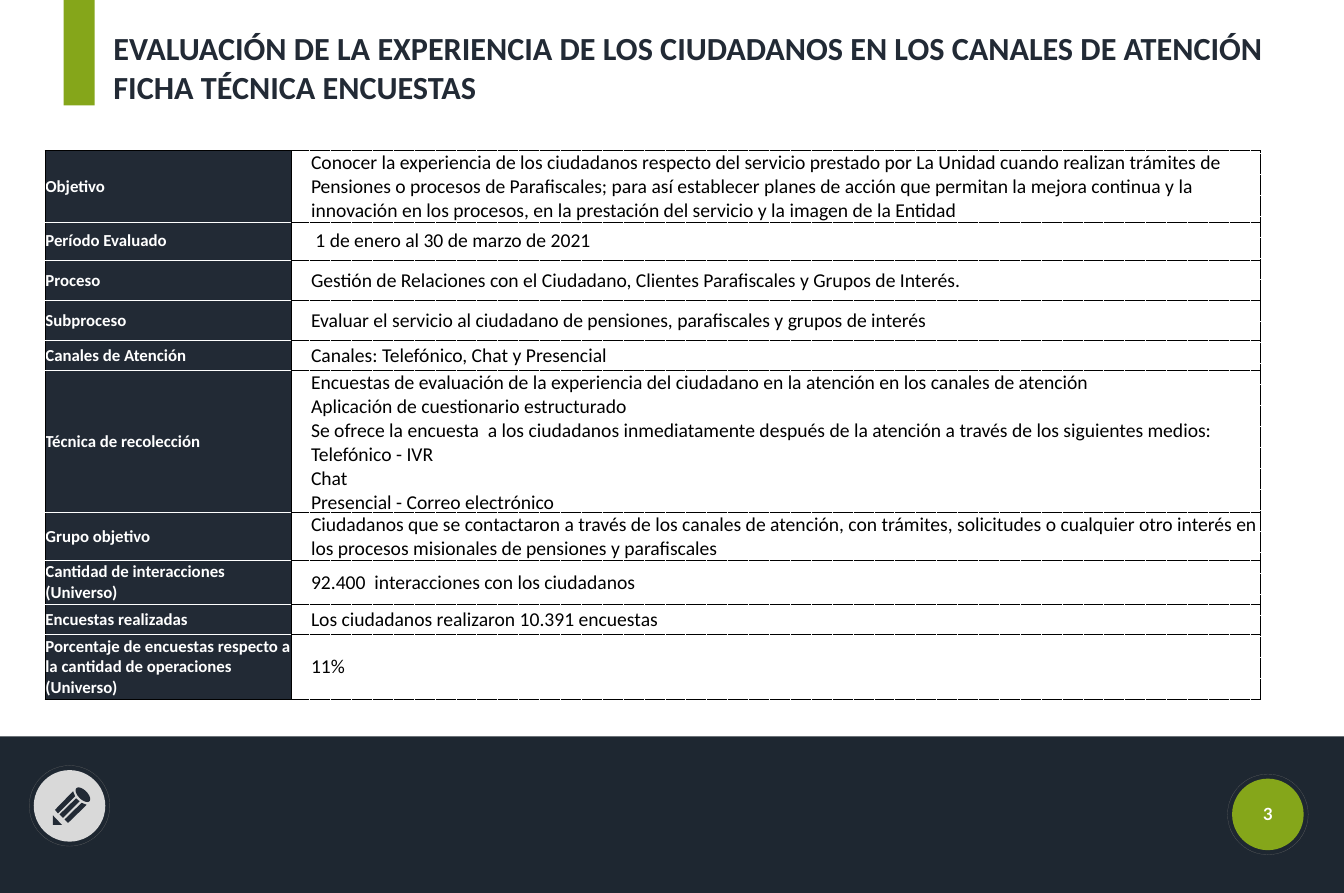
from math import cos, pi, sin

from lxml.etree import SubElement
from pptx import Presentation
from pptx.dml.color import RGBColor
from pptx.enum.dml import MSO_LINE
from pptx.enum.shapes import MSO_SHAPE
from pptx.enum.text import MSO_ANCHOR, MSO_AUTO_SIZE, PP_ALIGN
from pptx.oxml.ns import qn
from pptx.util import Pt

WIDE, HIGH = 1919.5, 1275.8
BAND = 1052
NAVY, DARK, GREEN, WHITE, BLACK = "222A35", "1E2731", "85A61A", "FFFFFF", "000000"
GRAY, RING = "D9D9D9", "666666"

TITLE = """EVALUACIÓN DE LA EXPERIENCIA DE LOS CIUDADANOS EN LOS CANALES DE ATENCIÓN
FICHA TÉCNICA ENCUESTAS"""

ROWS = [
    (94.3, "Objetivo", "Conocer la experiencia de los ciudadanos respecto del servicio prestado por La Unidad cuando realizan trámites de Pensiones o procesos de Parafiscales; para así establecer planes de acción que permitan la mejora continua y la innovación en los procesos, en la prestación del servicio y la imagen de la Entidad"),
    (54.7, "Período Evaluado", " 1 de enero al 30 de marzo de 2021"),
    (57.6, "Proceso", "Gestión de Relaciones con el Ciudadano, Clientes Parafiscales y Grupos de Interés."),
    (57.6, "Subproceso", "Evaluar el servicio al ciudadano de pensiones, parafiscales y grupos de interés"),
    (42.5, "Canales de Atención", "Canales: Telefónico, Chat y Presencial"),
    (183.6, "Técnica de recolección", """Encuestas de evaluación de la experiencia del ciudadano en la atención en los canales de atención
Aplicación de cuestionario estructurado
Se ofrece la encuesta  a los ciudadanos inmediatamente después de la atención a través de los siguientes medios:
Telefónico - IVR
Chat
Presencial - Correo electrónico"""),
    (69.1, "Grupo objetivo", "Ciudadanos que se contactaron a través de los canales de atención, con trámites, solicitudes o cualquier otro interés en los procesos misionales de pensiones y parafiscales"),
    (61.9, "Cantidad de interacciones (Universo)", "92.400  interacciones con los ciudadanos"),
    (43.9, "Encuestas realizadas", "Los ciudadanos realizaron 10.391 encuestas"),
    (92.2, "Porcentaje de encuestas respecto a la cantidad de operaciones (Universo)", "11%"),
]

TIP = [(0, 41), (13, 54.7), (0, 54.7)]
STRIPES = [
    [(28.8, 6.5), (2.9, 33.1), (7.2, 38.2), (31.7, 13.7)],
    [(33.1, 16.6), (9.4, 39.6), (14.4, 44.6), (38.2, 20.9)],
    [(41, 23), (16.6, 46.8), (21.6, 51.8), (48.2, 25.9)],
]


def tint(code):
    return RGBColor.from_string(code)


def write(frame, text, size=28, font="Calibri", color=BLACK, bold=False,
          align=PP_ALIGN.LEFT, indent=0):
    for num, line in enumerate(text.split("\n")):
        para = frame.add_paragraph() if num else frame.paragraphs[0]
        para.alignment = align
        if indent:
            props = para._p.get_or_add_pPr()
            props.set("marL", str(Pt(indent)))
            props.set("indent", "0")
        run = para.add_run()
        run.text = line
        run.font.size = Pt(size)
        run.font.name = font
        run.font.bold = bold
        run.font.color.rgb = tint(color)


def edge(cell, **sides):
    props = cell._tc.get_or_add_tcPr()
    for side in "LRTB":
        code, dash = sides[side]
        line = SubElement(props, qn("a:ln" + side), w=str(Pt(1)))
        fill = SubElement(line, qn("a:solidFill"))
        SubElement(fill, qn("a:srgbClr"), val=code)
        SubElement(line, qn("a:prstDash"), val=dash)


def oval(x, y, long, short, steps=32):
    turns = [2 * pi * k / steps for k in range(steps)]
    half = 0.5 ** 0.5
    return [(x + half * (long * cos(t) - short * sin(t)),
             y + half * (long * cos(t) + short * sin(t))) for t in turns]


class Deck:
    def __init__(self):
        self.prs = Presentation()
        self.prs.slide_width, self.prs.slide_height = Pt(WIDE), Pt(HIGH)
        self.slide = self.prs.slides.add_slide(self.prs.slide_layouts[5])
        self.shapes = self.slide.shapes

    def paint(self, shape, fill, line=None):
        shape.shadow.inherit = False
        if fill:
            shape.fill.solid()
            shape.fill.fore_color.rgb = tint(fill)
        else:
            shape.fill.background()
        if line:
            shape.line.color.rgb = tint(line)
            shape.line.width = Pt(0.25)
            shape.line.dash_style = MSO_LINE.SQUARE_DOT
        else:
            shape.line.fill.background()

    def shape(self, kind, x, y, w, h, fill=None, line=None):
        item = self.shapes.add_shape(kind, Pt(x), Pt(y), Pt(w), Pt(h))
        self.paint(item, fill, line)

    def badge(self, x, y, fill):
        for grow, face, line in ((0, fill, None), (6.5, None, RING)):
            size = 102.2 + 2 * grow
            self.shape(MSO_SHAPE.OVAL, x - size / 2, y - size / 2, size, size, face, line)

    def pencil(self, x, y):
        parts = [TIP, *STRIPES, oval(42.8, 11.5, 13.2, 6.6)]
        spots = [[(Pt(x + a), Pt(y + b)) for a, b in part] for part in parts]
        path = self.shapes.build_freeform(*spots[0][0], scale=1)
        path.add_line_segments(spots[0][1:], close=True)
        for part in spots[1:]:
            path.move_to(*part[0])
            path.add_line_segments(part[1:], close=True)
        self.paint(path.convert_to_shape(), NAVY)

    def title(self, text, x, y, w, h):
        item = self.shapes.title
        item.left, item.top, item.width, item.height = Pt(x), Pt(y), Pt(w), Pt(h)
        frame = item.text_frame
        frame.word_wrap = True
        frame.auto_size = MSO_AUTO_SIZE.NONE
        frame.vertical_anchor = MSO_ANCHOR.TOP
        write(frame, text, size=46, color=NAVY, bold=True)

    def label(self, text, x, y, w, h, **style):
        frame = self.shapes.add_textbox(Pt(x), Pt(y), Pt(w), Pt(h)).text_frame
        frame.word_wrap = True
        frame.vertical_anchor = MSO_ANCHOR.MIDDLE
        write(frame, text, **style)

    def cell(self, cell, text, fill=None, **style):
        cell.vertical_anchor = MSO_ANCHOR.MIDDLE
        cell.margin_left = cell.margin_right = cell.margin_top = Pt(0.72)
        cell.margin_bottom = 0
        if fill:
            cell.fill.solid()
            cell.fill.fore_color.rgb = tint(fill)
        else:
            cell.fill.background()
        write(cell.text_frame, text, **style)

    def table(self, rows, x, y, cols):
        high = sum(row[0] for row in rows)
        grid = self.shapes.add_table(len(rows), len(cols), Pt(x), Pt(y),
                                     Pt(sum(cols)), Pt(high)).table
        grid.first_row = grid.horz_banding = False
        for col, wide in zip(grid.columns, cols):
            col.width = Pt(wide)
        solid, dot, pale = (BLACK, "solid"), (BLACK, "dot"), (WHITE, "solid")
        last = len(rows) - 1
        for num, (tall, name, value) in enumerate(rows):
            grid.rows[num].height = Pt(tall)
            head, body = grid.cell(num, 0), grid.cell(num, 1)
            edge(head, L=solid, R=solid, T=pale if num else solid,
                 B=pale if num < last else solid)
            edge(body, L=solid, R=dot, T=dot, B=dot)
            self.cell(head, name, NAVY, size=24, color=WHITE, bold=True)
            self.cell(body, value, indent=28)


def main():
    deck = Deck()
    deck.shape(MSO_SHAPE.RECTANGLE, 0, BAND, WIDE, HIGH - BAND, DARK)
    deck.badge(99.3, 1151.3, GRAY)
    deck.pencil(75.6, 1123.9)
    deck.badge(1810.8, 1163.5, GREEN)
    deck.label("3", 1765.4, 1141.2, 90.8, 44, size=24, font="Lato",
               color=WHITE, bold=True, align=PP_ALIGN.CENTER)
    deck.table(ROWS, 64.1, 215.3, (351.4, 1383.8))
    deck.shape(MSO_SHAPE.RECTANGLE, 90.7, 0, 44.6, 150.5, GREEN)
    deck.title(TITLE, 154.8, 36.7, 1686.2, 118.8)
    deck.prs.save("out.pptx")


if __name__ == "__main__":
    main()
